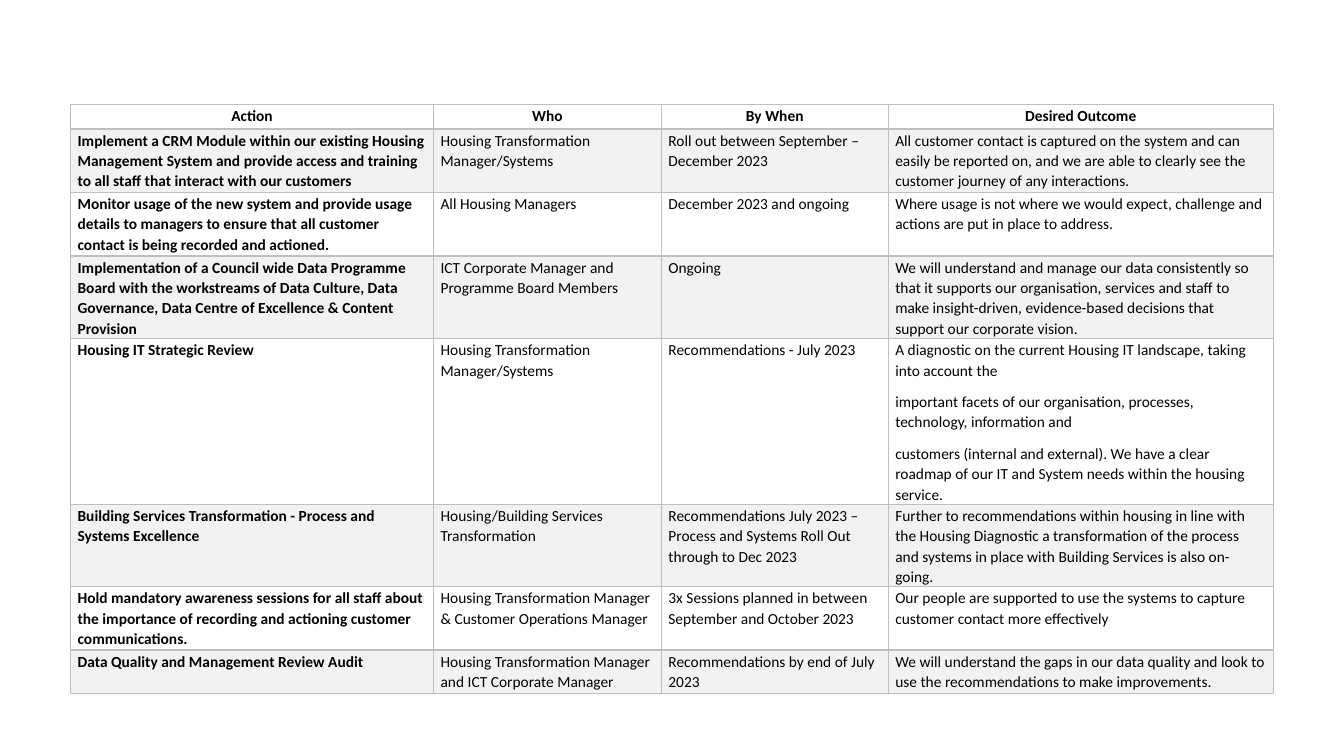
from lxml import etree
from pptx import Presentation
from pptx.dml.color import RGBColor
from pptx.enum.text import PP_ALIGN
from pptx.oxml.ns import qn
from pptx.util import Inches, Pt

CENTER, LEFT = PP_ALIGN.CENTER, PP_ALIGN.LEFT
BLANK_LAYOUT = 6
FONT = "Calibri"
TEXT, BORDER, BAND = "000000", "BFBFBF", "F2F2F2"

COLUMN_WIDTHS = [3.6, 2.26, 2.25, 3.82]
ROW_HEIGHTS = [0.24, 0.63, 0.63, 0.82, 1.42, 0.63, 0.63, 0.43]
ACTION_PLAN = [
    ("Action", "Who", "By When", "Desired Outcome"),
    ("Implement a CRM Module within our existing Housing Management System and provide "
     "access and training to all staff that interact with our customers",
     "Housing Transformation Manager/Systems",
     "Roll out between September – December 2023",
     "All customer contact is captured on the system and can easily be reported on, and "
     "we are able to clearly see the customer journey of any interactions."),
    ("Monitor usage of the new system and provide usage details to managers to ensure "
     "that all customer contact is being recorded and actioned.",
     "All Housing Managers",
     "December 2023 and ongoing",
     "Where usage is not where we would expect, challenge and actions are put in place "
     "to address."),
    ("Implementation of a Council wide Data Programme Board with the workstreams of Data "
     "Culture, Data Governance, Data Centre of Excellence & Content Provision",
     "ICT Corporate Manager and Programme Board Members",
     "Ongoing",
     "We will understand and manage our data consistently so that it supports our "
     "organisation, services and staff to make insight-driven, evidence-based decisions "
     "that support our corporate vision."),
    ("Housing IT Strategic Review",
     "Housing Transformation Manager/Systems",
     "Recommendations - July 2023",
     "A diagnostic on the current Housing IT landscape, taking into account the\n"
     "important facets of our organisation, processes, technology, information and\n"
     "customers (internal and external). We have a clear roadmap of our IT and System "
     "needs within the housing service."),
    ("Building Services Transformation - Process and Systems Excellence",
     "Housing/Building Services Transformation",
     "Recommendations July 2023 – Process and Systems Roll Out through to Dec 2023",
     "Further to recommendations within housing in line with the Housing Diagnostic a "
     "transformation of the process and systems in place with Building Services is also "
     "on-going."),
    ("Hold mandatory awareness sessions for all staff about the importance of recording "
     "and actioning customer communications.",
     "Housing Transformation Manager & Customer Operations Manager",
     "3x Sessions planned in between September and October 2023",
     "Our people are supported to use the systems to capture customer contact more "
     "effectively"),
    ("Data Quality and Management Review Audit",
     "Housing Transformation Manager and ICT Corporate Manager",
     "Recommendations by end of July 2023",
     "We will understand the gaps in our data quality and look to use the "
     "recommendations to make improvements."),
]


def rgb(hex_color):
    return RGBColor.from_string(hex_color)


def add_borders(cell, hex_color, points):
    """Draw all four sides; call before setting the fill, which must follow in the XML."""
    properties = cell._tc.get_or_add_tcPr()
    for side in ("a:lnL", "a:lnR", "a:lnT", "a:lnB"):
        line = etree.SubElement(properties, qn(side), w=str(Pt(points)))
        fill = etree.SubElement(line, qn("a:solidFill"))
        etree.SubElement(fill, qn("a:srgbClr"), val=hex_color)


def format_cell(cell, text, bold, align, fill):
    add_borders(cell, BORDER, 1)
    if fill:
        cell.fill.solid()
        cell.fill.fore_color.rgb = rgb(fill)
    else:
        cell.fill.background()
    cell.margin_left = cell.margin_right = Inches(0.07)
    cell.margin_top, cell.margin_bottom = Inches(0.01), Inches(0)
    cell.text_frame.text = text
    for paragraph in cell.text_frame.paragraphs:
        paragraph.alignment = align
        paragraph.line_spacing = 1.07
        paragraph.space_after = Pt(8)
        for run in paragraph.runs:
            run.font.name, run.font.size, run.font.bold = FONT, Pt(11), bold
            run.font.color.rgb = rgb(TEXT)


def add_action_plan(slide, left, top, width, height):
    """Fill the box with the plan, sharing it out by the column and row proportions."""
    table = slide.shapes.add_table(
        len(ACTION_PLAN), len(COLUMN_WIDTHS),
        Inches(left), Inches(top), Inches(width), Inches(height)).table
    table.first_row = table.horz_banding = False
    for column, share in zip(table.columns, COLUMN_WIDTHS):
        column.width = Inches(width * share / sum(COLUMN_WIDTHS))
    for row, share in zip(table.rows, ROW_HEIGHTS):
        row.height = Inches(height * share / sum(ROW_HEIGHTS))
    for row_index, entries in enumerate(ACTION_PLAN):
        is_header = row_index == 0
        for column_index, text in enumerate(entries):
            format_cell(table.cell(row_index, column_index), text,
                        bold=is_header or column_index == 0,
                        align=CENTER if is_header else LEFT,
                        fill=BAND if row_index % 2 else None)


def main():
    presentation = Presentation()
    presentation.slide_width, presentation.slide_height = Inches(13.33), Inches(7.5)
    slide = presentation.slides.add_slide(presentation.slide_layouts[BLANK_LAYOUT])
    add_action_plan(slide, 0.7, 1.04, sum(COLUMN_WIDTHS), sum(ROW_HEIGHTS))
    presentation.save("out.pptx")


if __name__ == "__main__":
    main()
